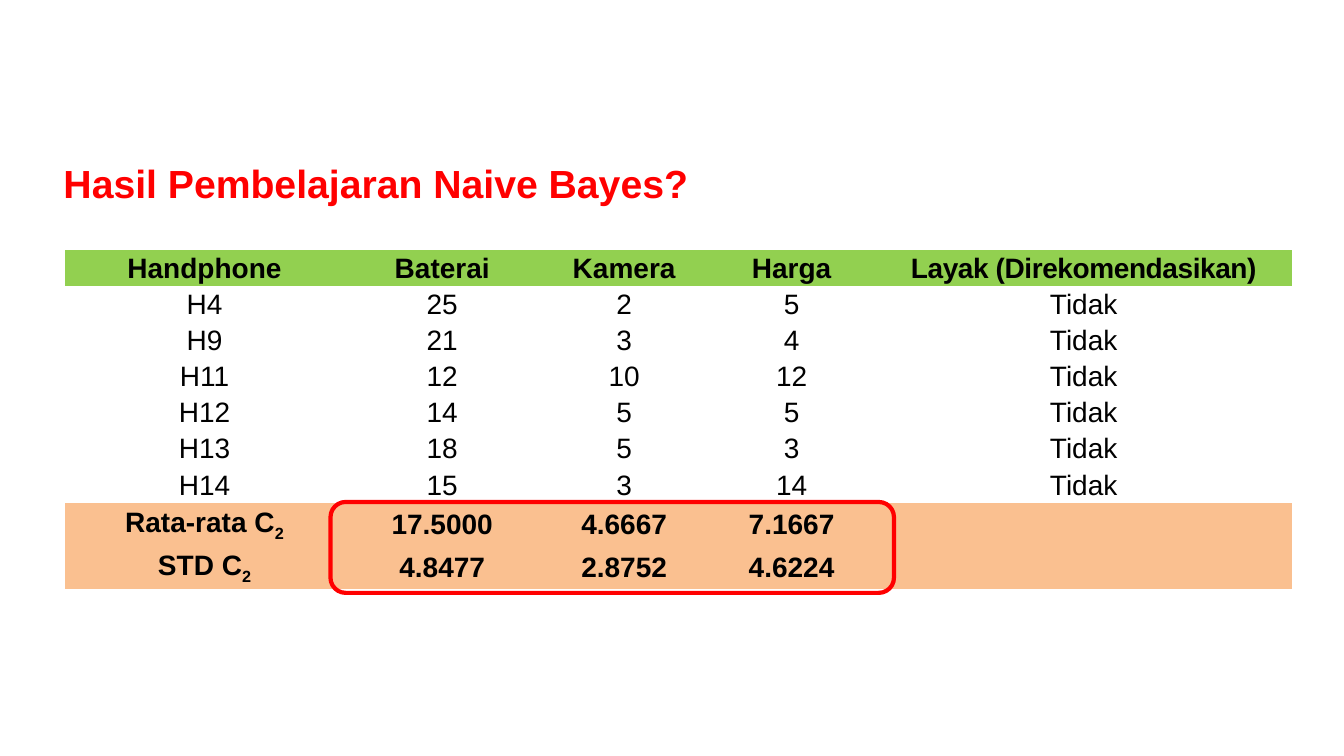
from pptx import Presentation
from pptx.dml.color import RGBColor
from pptx.enum.shapes import MSO_SHAPE
from pptx.enum.text import MSO_ANCHOR, PP_ALIGN
from pptx.util import Cm, Pt

ROUNDED = MSO_SHAPE.ROUNDED_RECTANGLE
MIDDLE = MSO_ANCHOR.MIDDLE
LEFT, CENTER = PP_ALIGN.LEFT, PP_ALIGN.CENTER

RED = RGBColor(0xFF, 0x00, 0x00)
BLACK = RGBColor(0x00, 0x00, 0x00)
GREEN = RGBColor(0x92, 0xD0, 0x50)
ORANGE = RGBColor(0xFA, 0xC0, 0x90)
NO_STYLE = "{2D5ABB26-0587-4C30-8999-92F81FD0307C}"


def add_text(p, text, size=20, bold=False, color=BLACK, align=CENTER, **attrs):
    """Add a run; attrs are run attributes such as baseline or spc."""
    p.alignment = align
    r = p.add_run()
    r.text = text
    r.font.name = "Arial"
    r.font.size = Pt(size)
    r.font.bold = bold
    r.font.color.rgb = color
    for name, value in attrs.items():
        r.font._element.set(name, str(value))


prs = Presentation()
prs.slide_width, prs.slide_height = Cm(33.87), Cm(19.05)
s = prs.slides.add_slide(prs.slide_layouts[5])

# Title
title = s.shapes.title
title.left, title.top, title.width, title.height = Cm(1.35), Cm(3.71), Cm(30.84), Cm(1.78)
tf = title.text_frame
tf.vertical_anchor = MIDDLE
tf.margin_left = tf.margin_right = tf.margin_top = tf.margin_bottom = Cm(0.25)
add_text(tf.paragraphs[0], "Hasil Pembelajaran Naive Bayes?", size=28, bold=True,
         color=RED, align=LEFT)

# Table data: header, phones, then the statistics of class C2
header = ["Handphone", "Baterai", "Kamera", "Harga", "Layak (Direkomendasikan)"]
phones = [
    ["H4", "25", "2", "5"],
    ["H9", "21", "3", "4"],
    ["H11", "12", "10", "12"],
    ["H12", "14", "5", "5"],
    ["H13", "18", "5", "3"],
    ["H14", "15", "3", "14"],
]
stats = [
    ["Rata-rata C", "17.5000", "4.6667", "7.1667", ""],
    ["STD C", "4.8477", "2.8752", "4.6224", ""],
]
rows = [header] + [phone + ["Tidak"] for phone in phones] + stats
first_stat = len(rows) - len(stats)
col_widths = [7.03, 4.95, 4.22, 4.22, 10.5]

# Table
frame = s.shapes.add_table(len(rows), len(header), Cm(1.64), Cm(6.3), Cm(30.92), Cm(8.53))
table = frame.table
table.first_row = table.horz_banding = False
table._tbl.tblPr.find("{*}tableStyleId").text = NO_STYLE
for col, width in zip(table.columns, col_widths):
    col.width = Cm(width)

for i, values in enumerate(rows):
    is_stat = i >= first_stat
    table.rows[i].height = Cm(1.08 if is_stat else 0.91)
    for j, value in enumerate(values):
        cell = table.cell(i, j)
        cell.vertical_anchor = MIDDLE
        cell.margin_left = cell.margin_right = cell.margin_top = Cm(0.03)
        cell.margin_bottom = 0
        if i == 0 or is_stat:
            cell.fill.solid()
            cell.fill.fore_color.rgb = ORANGE if is_stat else GREEN
        else:
            cell.fill.background()
        if not value:
            continue
        p = cell.text_frame.paragraphs[0]
        spacing = {"spc": -30} if value == header[-1] else {}
        add_text(p, value, bold=i == 0 or is_stat, **spacing)
        if is_stat and j == 0:
            add_text(p, "2", bold=True, baseline=-25000)

# Red frame around the statistics
box = s.shapes.add_shape(ROUNDED, Cm(8.33), Cm(12.65), Cm(14.2), Cm(2.29))
box.shadow.inherit = False
box.fill.background()
box.line.color.rgb = RED
box.line.width = Pt(3)

prs.save("out.pptx")
